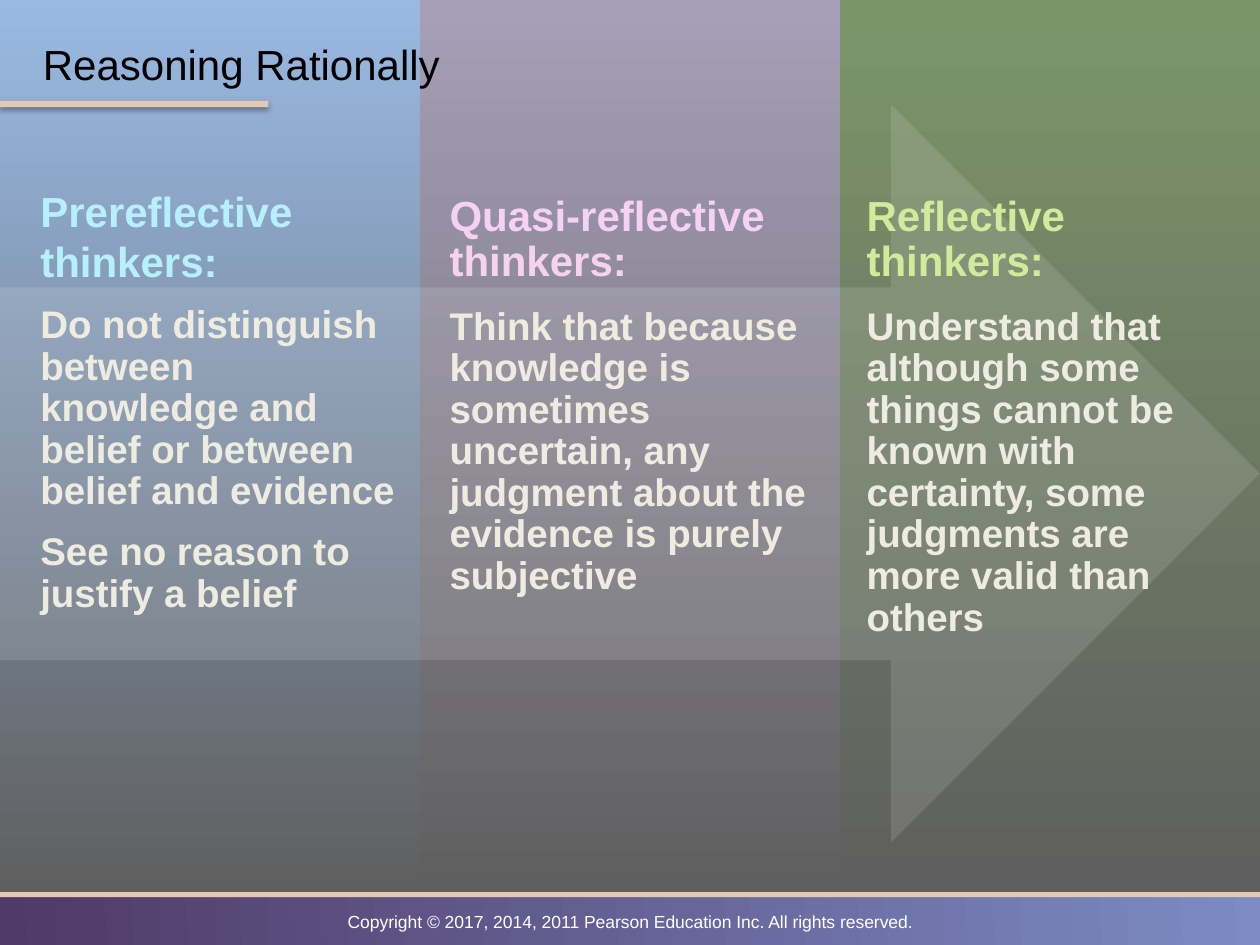
from lxml.etree import SubElement
from pptx import Presentation
from pptx.dml.color import RGBColor
from pptx.enum.shapes import MSO_SHAPE
from pptx.enum.text import MSO_ANCHOR, MSO_AUTO_SIZE, PP_ALIGN
from pptx.oxml.ns import qn
from pptx.util import Inches, Pt

BLACK = RGBColor(0x00, 0x00, 0x00)
WHITE = RGBColor(0xFF, 0xFF, 0xFF)
CREAM = RGBColor(0xEE, 0xEC, 0xE1)
PEACH = RGBColor(0xE7, 0xC8, 0xB3)
GREY = RGBColor(0x5F, 0x5F, 0x5F)
PURPLE = RGBColor(0x4F, 0x39, 0x67)
PERIWINKLE = RGBColor(0x7C, 0x8B, 0xC4)
BLUE = RGBColor(0x99, 0xB9, 0xE3)
MAUVE = RGBColor(0xA6, 0x9F, 0xB8)
GREEN = RGBColor(0x7B, 0x95, 0x68)
PALE_BLUE = RGBColor(0xB7, 0xEF, 0xFC)
PALE_PINK = RGBColor(0xF5, 0xD3, 0xF0)
PALE_GREEN = RGBColor(0xCF, 0xEB, 0x9B)

PANEL_HEIGHT = 94.4
PANEL_WIDTH = 100 / 3


def write(p, text, size, color, bold=False, font="Arial", align=PP_ALIGN.LEFT,
          line=1.0, before=0, after=0):
    pPr = p._p.get_or_add_pPr()
    pPr.set("marL", "0")
    pPr.set("indent", "0")
    SubElement(pPr, qn("a:buNone"))
    p.alignment, p.line_spacing = align, line
    p.space_before, p.space_after = Pt(before), Pt(after)
    r = p.add_run()
    r.text = text
    r.font.name, r.font.size, r.font.bold = font, Pt(size), bold
    r.font.color.rgb = color


class Deck:
    """Slide builder; every box is (left, top, width, height) in percent of the slide."""

    def __init__(self):
        self.prs = Presentation()
        self.prs.slide_width, self.prs.slide_height = Inches(10), Inches(7.5)
        self.s = self.prs.slides.add_slide(self.prs.slide_layouts[1])

    def place(self, box):
        sizes = (self.prs.slide_width, self.prs.slide_height) * 2
        return [round(share * size / 100) for share, size in zip(box, sizes)]

    def shape(self, box, color, end=None, angle=0, alpha=None, kind=MSO_SHAPE.RECTANGLE):
        sp = self.s.shapes.add_shape(kind, *self.place(box))
        sp.shadow.inherit = False
        sp.line.fill.background()
        if end is None:
            sp.fill.solid()
            sp.fill.fore_color.rgb = color
        else:
            sp.fill.gradient()
            sp.fill.gradient_angle = angle
            for stop, rgb in zip(sp.fill.gradient_stops, (color, end)):
                stop.color.rgb = rgb
        if alpha is not None:
            clr = sp._element.spPr.find(".//" + qn("a:srgbClr"))
            SubElement(clr, qn("a:alpha"), val=str(alpha * 1000))
        return sp

    def drop_shadow(self, sp, blur, dist, alpha):
        effects = sp._element.spPr.find(qn("a:effectLst"))
        shadow = SubElement(effects, qn("a:outerShdw"), blurRad=str(Pt(blur)),
                            dist=str(Pt(dist)), dir="5400000", rotWithShape="0")
        clr = SubElement(shadow, qn("a:srgbClr"), val=str(BLACK))
        SubElement(clr, qn("a:alpha"), val=str(alpha * 1000))

    def fill_text(self, sp, paragraphs, anchor=MSO_ANCHOR.TOP):
        tf = sp.text_frame
        tf.word_wrap, tf.auto_size = True, MSO_AUTO_SIZE.NONE
        tf.vertical_anchor = anchor
        for i, (text, style) in enumerate(paragraphs):
            write(tf.add_paragraph() if i else tf.paragraphs[0], text, **style)

    def text(self, box, paragraphs):
        self.fill_text(self.s.shapes.add_textbox(*self.place(box)), paragraphs)

    def placeholder(self, idx, box, paragraphs, anchor=MSO_ANCHOR.TOP):
        sp = self.s.placeholders[idx]
        sp.left, sp.top, sp.width, sp.height = self.place(box)
        self.s.shapes._spTree.append(sp._element)
        self.fill_text(sp, paragraphs, anchor)


def main():
    deck = Deck()
    deck.shape((0, PANEL_HEIGHT, 100, 100 - PANEL_HEIGHT), PURPLE, PERIWINKLE, angle=4)
    deck.shape((0, 94.27, 100, 0.67), PEACH)
    deck.text((0, 95.73, 100, 3.6), [
        ("Copyright © 2017, 2014, 2011 Pearson Education Inc. All rights reserved.",
         dict(size=10, color=WHITE, align=PP_ALIGN.CENTER))])

    for i, color in enumerate((BLUE, MAUVE, GREEN)):
        deck.shape((i * PANEL_WIDTH, 0, PANEL_WIDTH, PANEL_HEIGHT), color, GREY, angle=270)
    arrow = deck.shape((0, 11.07, 100, 78.13), WHITE, alpha=12, kind=MSO_SHAPE.RIGHT_ARROW)
    arrow.adjustments[0], arrow.adjustments[1] = 0.505, 0.5

    deck.placeholder(0, (2.4, 2.8, 85, 7.87), [
        ("Reasoning Rationally", dict(size=24, color=BLACK))], MSO_ANCHOR.MIDDLE)

    heading = dict(size=24, bold=True)
    body = dict(size=22, bold=True, color=CREAM, line=0.9)
    item = dict(body, before=5, after=6)
    deck.placeholder(1, (2.2, 18.93, 30.6, 47.47), [
        ("Prereflective thinkers:", dict(heading, color=PALE_BLUE, after=6)),
        ("Do not distinguish between knowledge and belief or between belief and evidence",
         item),
        ("See no reason to justify a belief", item)])

    columns = [
        (34.7, "Quasi-reflective thinkers:", PALE_PINK,
         "Think that because knowledge is sometimes uncertain, any judgment about "
         "the evidence is purely subjective"),
        (67.8, "Reflective thinkers:", PALE_GREEN,
         "Understand that although some things cannot be known with certainty, some "
         "judgments are more valid than others"),
    ]
    for left, title, color, text in columns:
        deck.text((left, 20, 30.3, 47), [
            (title, dict(heading, color=color, line=0.9, after=12)), (text, body)])

    rule = deck.shape((0, 10.67, 21.3, 0.67), PEACH)
    deck.drop_shadow(rule, blur=3.1, dist=1.8, alpha=35)
    deck.prs.save("out.pptx")


if __name__ == "__main__":
    main()
